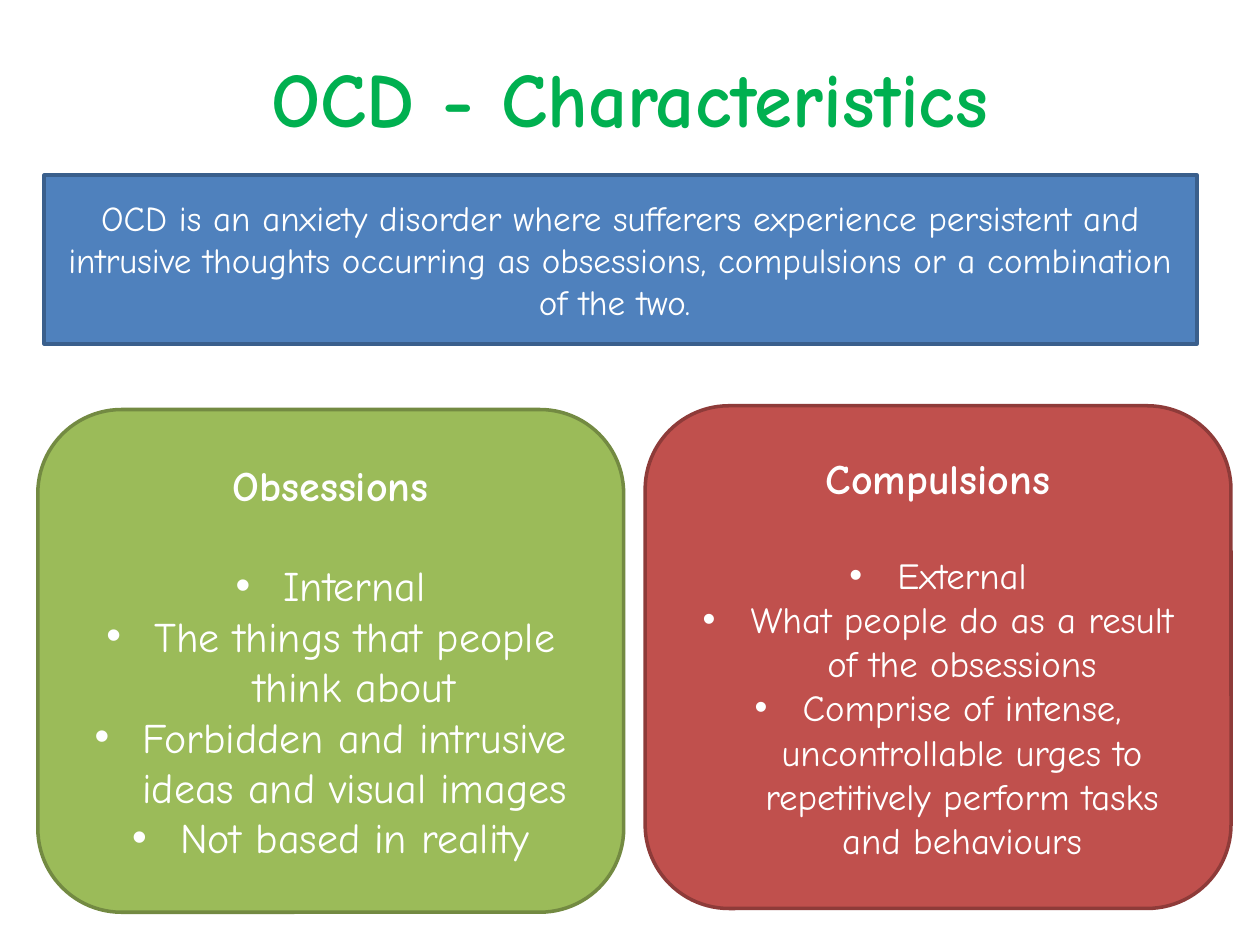
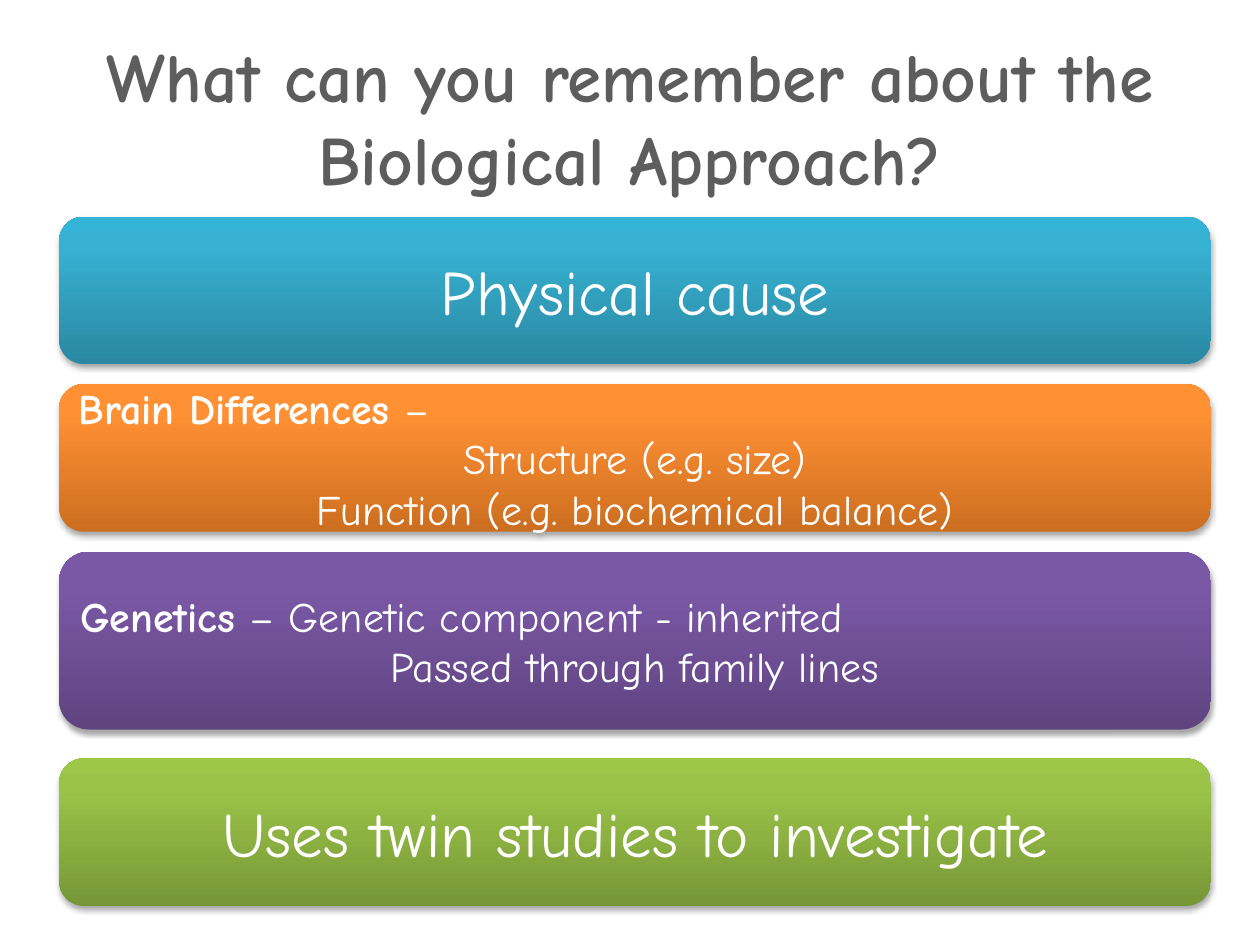
from pptx import Presentation
from pptx.dml.color import RGBColor
from pptx.enum.shapes import MSO_SHAPE as Shape
from pptx.enum.text import MSO_ANCHOR as Anchor, MSO_AUTO_SIZE as Fit, PP_ALIGN as Align
from pptx.oxml import parse_xml
from pptx.oxml.ns import nsdecls, qn
from pptx.util import Inches, Pt

FONT = "Comic Neue"
HEX = {
    "white": "FFFFFF", "green": "00B050", "grey": "5D5D5D", "black": "000000",
    "blue": "4F81BD", "blue_edge": "3A5F8C",
    "lime": "9BBB59", "lime_edge": "738A42",
    "red": "C0504D", "red_edge": "8E3B39",
}
# Colours of each bar at 0, 80 and 100 %, from the bottom up
BLENDS = {
    "teal": ("2A88A2", "37B1D2", "34B4D6"),
    "orange": ("CC6E20", "FF9034", "FF9136"),
    "purple": ("5F4480", "7B58A6", "7C57A8"),
    "leaf": ("779737", "9BC348", "9DC746"),
}
STOPS = (0, 80, 100)
INDENT = Inches(0.38)


def rgb(name):
    return RGBColor.from_string(HEX[name])


def add_run(para, text, size, bold=False, color="white"):
    run = para.add_run()
    run.text = text
    font = run.font
    font.name, font.size, font.bold = FONT, Pt(size), bold
    font.color.rgb = rgb(color)


def next_para(frame, align=Align.CENTER):
    """Return the first paragraph while it is empty, else a new one."""
    para = frame.paragraphs[0]
    if para.runs:
        para = frame.add_paragraph()
    para.alignment = align
    return para


def add_bullet(para):
    props = para._p.get_or_add_pPr()
    props.set("marL", str(INDENT))
    props.set("indent", str(-INDENT))
    props.append(parse_xml(f'<a:buFont {nsdecls("a")} typeface="Arial"/>'))
    props.append(parse_xml(f'<a:buChar {nsdecls("a")} char="•"/>'))


def add_slide(prs, title, top, size, color):
    slide = prs.slides.add_slide(prs.slide_layouts[5])
    head = slide.shapes.title
    head.left, head.top = Inches(0.5), Inches(top)
    head.width, head.height = Inches(9), Inches(1.25)
    frame = head.text_frame
    frame.auto_size = Fit.NONE
    frame.vertical_anchor = Anchor.MIDDLE
    add_run(next_para(frame), title, size, True, color)
    return slide


def add_box(slide, kind, area):
    box = slide.shapes.add_shape(kind, *map(Inches, area))
    box.shadow.inherit = False
    box.text_frame.word_wrap = True
    box.text_frame.vertical_anchor = Anchor.MIDDLE
    return box


def add_panel(slide, kind, area, color):
    """Add a flat box with a darker edge and return its text frame."""
    box = add_box(slide, kind, area)
    box.fill.solid()
    box.fill.fore_color.rgb = rgb(color)
    box.line.color.rgb = rgb(color + "_edge")
    box.line.width = Pt(2)
    return box.text_frame


def add_card(slide, left, top, color, head, points, size):
    frame = add_panel(slide, Shape.ROUNDED_RECTANGLE, (left, top, 4.65, 3.99), color)
    para = next_para(frame)
    para.space_after = Pt(28.5)
    add_run(para, head, 24, True)
    for point in points:
        para = next_para(frame)
        add_bullet(para)
        add_run(para, point, size)


def blend(box, colors):
    box.fill.gradient()
    box.fill.gradient_angle = 90
    stops = box._element.spPr.find(".//" + qn("a:gsLst"))
    for old in list(stops):
        stops.remove(old)
    for pos, color in zip(STOPS, colors):
        stops.append(parse_xml(
            f'<a:gs {nsdecls("a")} pos="{pos * 1000}"><a:srgbClr val="{color}"/></a:gs>'))


def cast_shadow(box):
    box._element.spPr.find(qn("a:effectLst")).append(parse_xml(
        f'<a:outerShdw {nsdecls("a")} blurRad="{Pt(3.1)}" dist="{Pt(1.8)}" dir="5400000" '
        f'rotWithShape="0"><a:srgbClr val="{HEX["black"]}"><a:alpha val="35000"/>'
        '</a:srgbClr></a:outerShdw>'))


def add_bar(slide, top, height, color, size, lines):
    """Add a shaded bar; a line with a bold lead is set left, others centred."""
    box = add_box(slide, Shape.ROUNDED_RECTANGLE, (0.47, top, 9.14, height))
    box.line.fill.background()
    blend(box, BLENDS[color])
    cast_shadow(box)
    for lead, text in lines:
        para = next_para(box.text_frame, Align.LEFT if lead else Align.CENTER)
        if lead:
            add_run(para, lead, size, True)
        add_run(para, text, size)


def build_traits(prs):
    slide = add_slide(prs, "OCD - Characteristics", 0.14, 44, "green")
    frame = add_panel(slide, Shape.RECTANGLE, (0.35, 1.39, 9.15, 1.34), "blue")
    add_run(next_para(frame),
            "OCD is an anxiety disorder where sufferers experience persistent and "
            "intrusive thoughts occurring as obsessions, compulsions or a combination "
            "of the two. ", 20)
    add_card(slide, 0.3, 3.25, "lime", "Obsessions", (
        "Internal",
        "The things that people think about",
        "Forbidden and intrusive ideas and visual images",
        "Not based in reality"), 24)
    add_card(slide, 5.12, 3.22, "red", "Compulsions", (
        "External",
        "What people do as a result of the obsessions",
        "Comprise of intense, uncontrollable urges to repetitively perform "
        "tasks and behaviours"), 21)


def build_recall(prs):
    slide = add_slide(prs, "What can you remember about the Biological Approach?",
                      0.3, 39.6, "grey")
    add_bar(slide, 1.72, 1.17, "teal", 36, [("", "Physical cause")])
    add_bar(slide, 3.05, 1.17, "orange", 24, [
        ("Brain Differences ", "–"),
        ("", "Structure (e.g. size)"),
        ("", "Function (e.g. biochemical balance)")])
    add_bar(slide, 4.38, 1.41, "purple", 24, [
        ("Genetics", " – Genetic component - inherited"),
        ("", "Passed through family lines")])
    add_bar(slide, 6.02, 1.17, "leaf", 36, [("", "Uses twin studies to investigate")])


def main():
    prs = Presentation()
    prs.slide_width, prs.slide_height = Inches(10), Inches(7.5)
    build_traits(prs)
    build_recall(prs)
    prs.save("out.pptx")


if __name__ == "__main__":
    main()
